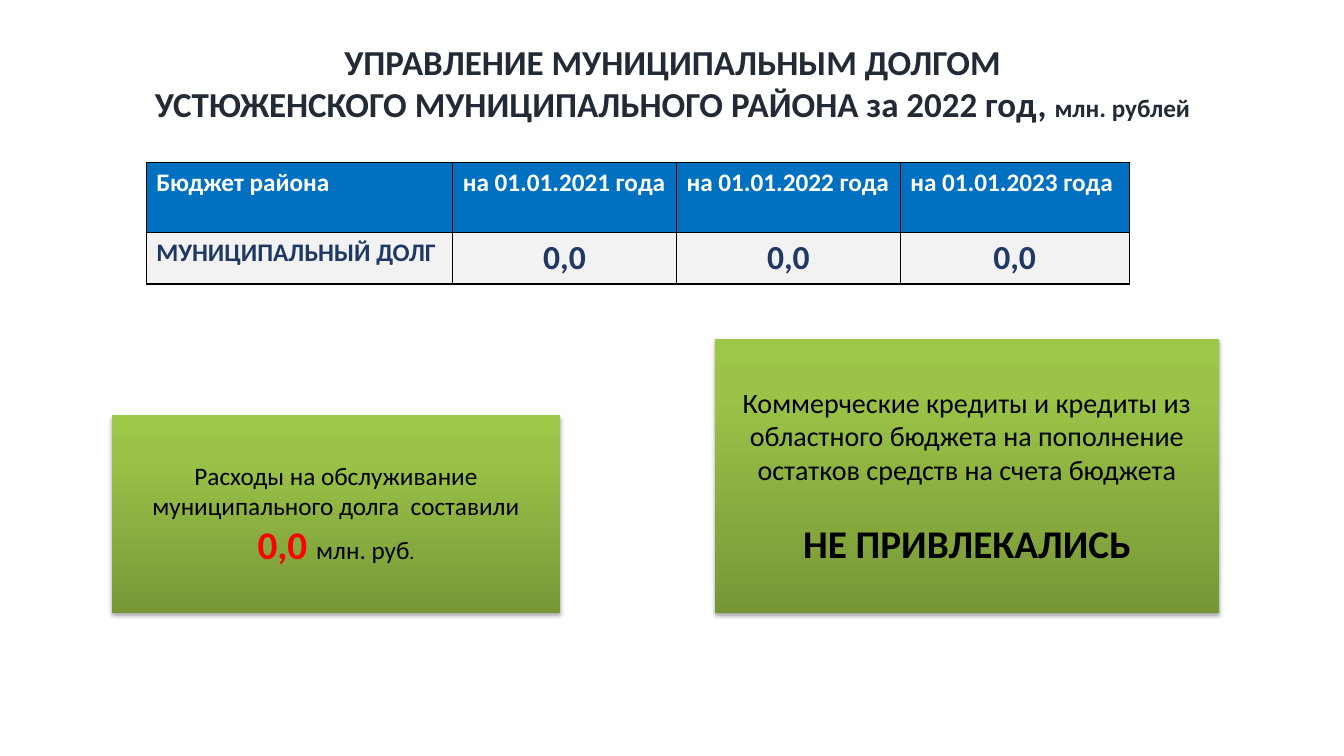
from lxml import etree
from pptx import Presentation, util as u
from pptx.dml.color import RGBColor
from pptx.enum import shapes, text
from pptx.oxml import parse_xml

NS = "http://schemas.openxmlformats.org/drawingml/2006/main"
FONT = "Calibri"
WIDTH, HEIGHT = 13.33, 7.5
DARK, NAVY, BLACK, WHITE, RED = "222A35", "203864", "000000", "FFFFFF", "FF0000"
HEADER_FILL, ROW_FILL = "0070C0", "F2F2F2"
GREEN_STOPS = [(0, "779737"), (80, "9BC348"), (100, "9DC746")]
CENTER = text.PP_ALIGN.CENTER


def color(value):
    return RGBColor.from_string(value)


def write(paragraph, runs, align=CENTER):
    """Fill a paragraph with (text, size, colour, bold) runs."""
    paragraph.alignment = align
    for words, size, value, bold in runs:
        run = paragraph.add_run()
        run.text = words
        run.font.name = FONT
        run.font.size = u.Pt(size)
        run.font.bold = bold
        run.font.color.rgb = color(value)


def write_lines(frame, lines):
    for index, runs in enumerate(lines):
        paragraph = frame.add_paragraph() if index else frame.paragraphs[0]
        write(paragraph, runs)


def add_title(slide, box):
    title = slide.shapes.title
    title.left, title.top, title.width, title.height = map(u.Inches, box)
    frame = title.text_frame
    frame.auto_size = text.MSO_AUTO_SIZE.NONE
    frame.vertical_anchor = text.MSO_ANCHOR.MIDDLE
    write_lines(frame, [
        [("УПРАВЛЕНИЕ МУНИЦИПАЛЬНЫМ ДОЛГОМ", 25, DARK, True)],
        [("УСТЮЖЕНСКОГО МУНИЦИПАЛЬНОГО РАЙОНА за 2022 год, ", 25, DARK, True),
         ("млн. рублей", 18, DARK, True)],
    ])


def border(cell):
    properties = cell._tc.get_or_add_tcPr()
    for position, side in enumerate(("lnL", "lnR", "lnT", "lnB")):
        properties.insert(position, parse_xml(
            f'<a:{side} xmlns:a="{NS}" w="12700"><a:solidFill>'
            f'<a:srgbClr val="{BLACK}"/></a:solidFill></a:{side}>'))


def add_debt_table(slide, box):
    years = (2021, 2022, 2023)
    rows = [["Бюджет района"] + [f"на 01.01.{year} года" for year in years],
            ["МУНИЦИПАЛЬНЫЙ ДОЛГ"] + ["0,0"] * len(years)]
    table = slide.shapes.add_table(2, 4, *map(u.Inches, box)).table
    for column, width in zip(table.columns, (3.04, 2.22, 2.22, 2.27)):
        column.width = u.Inches(width)
    for row, height in zip(table.rows, (0.7, 0.5)):
        row.height = u.Inches(height)
    for r, words in enumerate(rows):
        for c, word in enumerate(words):
            cell = table.cell(r, c)
            is_value = r == 1 and c > 0
            cell.fill.solid()
            cell.fill.fore_color.rgb = color(ROW_FILL if r else HEADER_FILL)
            border(cell)
            write(cell.text_frame.paragraphs[0],
                  [(word, 24 if is_value else 18, NAVY if r else WHITE, True)],
                  CENTER if is_value else text.PP_ALIGN.LEFT)


def add_green_box(slide, box, lines, gap=0):
    """Add a shaded panel; gap is the space in points above its last line."""
    shape = slide.shapes.add_shape(shapes.MSO_SHAPE.FLOWCHART_PROCESS, *map(u.Inches, box))
    shape.line.fill.background()
    shape.fill.gradient()
    shape.fill.gradient_angle = 90
    stops = shape._element.spPr.find(f"{{{NS}}}gradFill/{{{NS}}}gsLst")
    for stop in list(stops):
        stops.remove(stop)
    for share, value in GREEN_STOPS:
        stop = etree.SubElement(stops, f"{{{NS}}}gs", pos=str(share * 1000))
        etree.SubElement(stop, f"{{{NS}}}srgbClr", val=value)
    shape.shadow.inherit = False
    effects = shape._element.spPr.find(f"{{{NS}}}effectLst")
    effects.append(parse_xml(
        f'<a:outerShdw xmlns:a="{NS}" blurRad="{u.Pt(3.1)}" dist="{u.Pt(1.8)}" '
        f'dir="5400000" rotWithShape="0"><a:srgbClr val="{BLACK}">'
        '<a:alpha val="35000"/></a:srgbClr></a:outerShdw>'))
    frame = shape.text_frame
    frame.word_wrap = True
    frame.vertical_anchor = text.MSO_ANCHOR.MIDDLE
    write_lines(frame, lines)
    frame.paragraphs[-1].space_before = u.Pt(gap)


def main():
    presentation = Presentation()
    presentation.slide_width, presentation.slide_height = u.Inches(WIDTH), u.Inches(HEIGHT)
    slide = presentation.slides.add_slide(presentation.slide_layouts[5])
    add_title(slide, (0.43, 0.35, 12.48, 0.94))
    add_debt_table(slide, (1.45, 1.61, 9.75, 1.2))
    bottom = 6.08
    cost_height, credit_height = 1.96, 2.72
    add_green_box(slide, (WIDTH / 12, bottom - cost_height, WIDTH / 3, cost_height), [
        [("Расходы на обслуживание муниципального долга  составили", 18, BLACK, False)],
        [("0,0 ", 28, RED, True), ("млн. руб", 18, BLACK, False), (".", 14, BLACK, False)],
    ])
    add_green_box(slide, (7.09, bottom - credit_height, 5, credit_height), [
        [("Коммерческие кредиты и кредиты из областного бюджета на пополнение "
          "остатков средств на счета бюджета", 20, BLACK, False)],
        [("НЕ ПРИВЛЕКАЛИСЬ", 28, BLACK, True)],
    ], gap=24)
    presentation.save("out.pptx")


if __name__ == "__main__":
    main()
